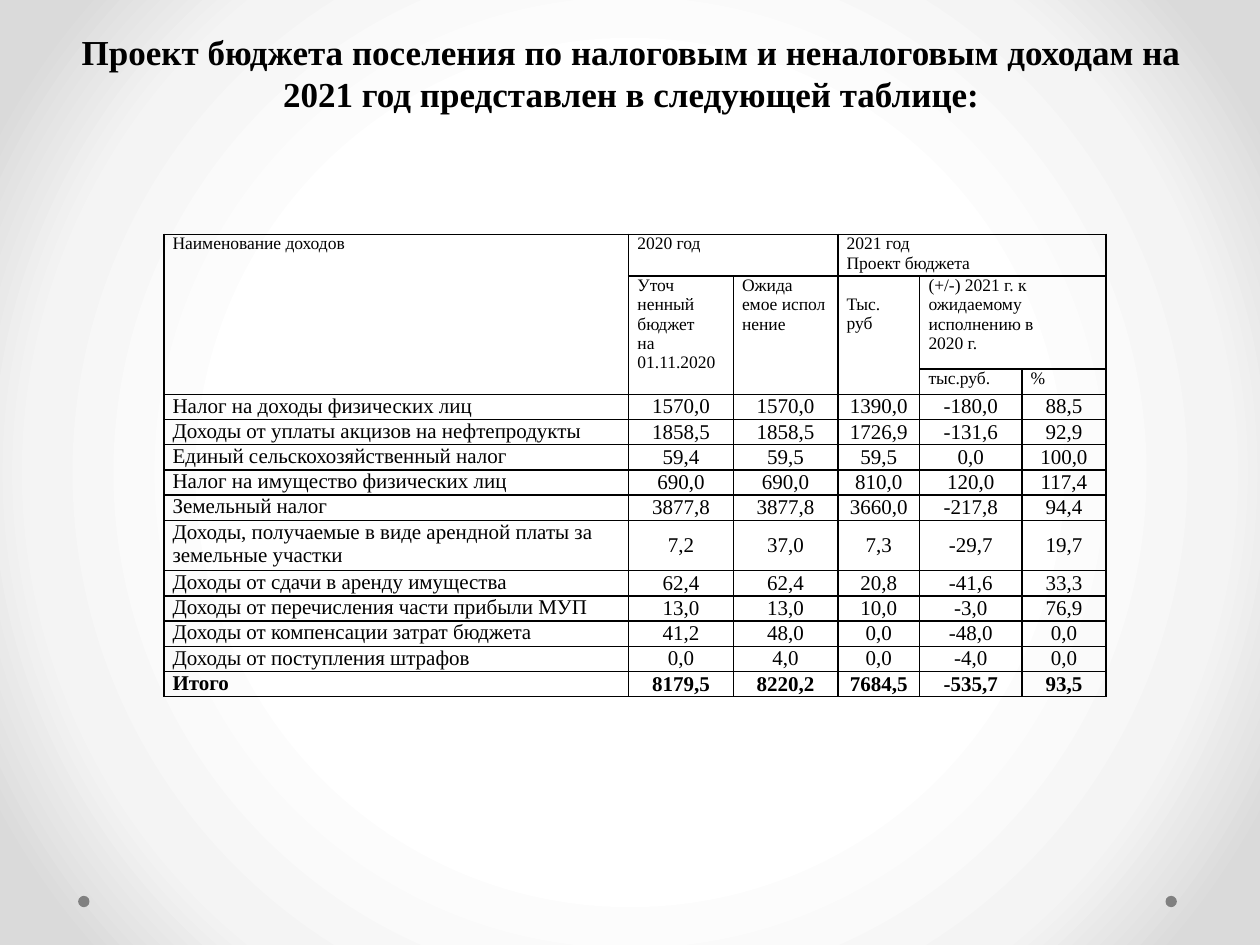
from lxml.etree import fromstring
from pptx import Presentation
from pptx.dml.color import RGBColor
from pptx.enum.shapes import MSO_SHAPE
from pptx.enum.text import MSO_ANCHOR, MSO_AUTO_SIZE, PP_ALIGN
from pptx.oxml.ns import qn
from pptx.util import Inches, Pt

COLORS = {"ink": "000000", "dot": "808080", "core": "FFFFFF", "ring": "F4F4F4", "edge": "DADADA"}
FONT = "Times New Roman"
NS = "http://schemas.openxmlformats.org/drawingml/2006/main"

TITLE = ("Проект бюджета поселения по налоговым и неналоговым доходам на "
         "2021 год представлен в следующей таблице:")
COLS = [3.69, 0.83, 0.83, 0.65, 0.81, 0.67]
ROWS = [0.33, 0.74] + [0.2] * 6 + [0.4] + [0.2] * 5

# Header cells: first row and column, last row and column, text
HEAD = [
    (0, 0, 2, 0, "Наименование доходов"),
    (0, 1, 0, 2, "2020 год"),
    (0, 3, 0, 5, "2021 год\nПроект бюджета"),
    (1, 1, 2, 1, "Уточ\nненный бюджет\nна\n01.11.2020"),
    (1, 2, 2, 2, "Ожида\nемое испол\nнение"),
    (1, 3, 2, 3, "Тыс.\nруб"),
    (1, 4, 1, 5, "(+/-) 2021 г. к ожидаемому\nисполнению в\n2020 г."),
    (2, 4, 2, 4, "тыс.руб."),
    (2, 5, 2, 5, "%"),
]
DATA = [
    ("Налог на доходы физических лиц", "1570,0", "1570,0", "1390,0", "-180,0", "88,5"),
    ("Доходы от уплаты акцизов на нефтепродукты", "1858,5", "1858,5", "1726,9", "-131,6", "92,9"),
    ("Единый сельскохозяйственный налог", "59,4", "59,5", "59,5", "0,0", "100,0"),
    ("Налог на имущество физических лиц", "690,0", "690,0", "810,0", "120,0", "117,4"),
    ("Земельный налог", "3877,8", "3877,8", "3660,0", "-217,8", "94,4"),
    ("Доходы, получаемые в виде арендной платы за земельные участки",
     "7,2", "37,0", "7,3", "-29,7", "19,7"),
    ("Доходы от сдачи в аренду имущества", "62,4", "62,4", "20,8", "-41,6", "33,3"),
    ("Доходы от перечисления части прибыли МУП", "13,0", "13,0", "10,0", "-3,0", "76,9"),
    ("Доходы от компенсации затрат бюджета", "41,2", "48,0", "0,0", "-48,0", "0,0"),
    ("Доходы от поступления штрафов", "0,0", "4,0", "0,0", "-4,0", "0,0"),
    ("Итого", "8179,5", "8220,2", "7684,5", "-535,7", "93,5"),
]


def color(name):
    return RGBColor.from_string(COLORS[name])


def write(frame, text, size=12, bold=False, align=PP_ALIGN.LEFT):
    """Fill a text frame, one paragraph for each line."""
    for i, line in enumerate(text.split("\n")):
        para = frame.paragraphs[0] if i == 0 else frame.add_paragraph()
        para.alignment = align
        run = para.add_run()
        run.text = line
        run.font.name = FONT
        run.font.size = Pt(size)
        run.font.bold = bold
        run.font.color.rgb = color("ink")


def paint_back(slide):
    """Radial gradient, light in the centre."""
    slide.background.fill.solid()
    fill = slide.background.fill
    fill.fore_color.rgb = color("core")
    prop = slide.element.find(".//" + qn("p:bgPr"))
    stops = "".join(
        f'<a:gs pos="{pos * 1000}"><a:srgbClr val="{COLORS[name]}"/></a:gs>'
        for pos, name in [(50, "core"), (76, "ring"), (92, "edge")])
    grad = fromstring(
        f'<a:gradFill xmlns:a="{NS}" rotWithShape="1"><a:gsLst>{stops}</a:gsLst>'
        '<a:path path="circle"><a:fillToRect l="50000" t="50000" r="50000" b="50000"/>'
        '</a:path></a:gradFill>')
    prop.replace(prop.find(qn("a:solidFill")), grad)


def add_dots(slide, left, top, width, size):
    """One dot at each end of the box."""
    for x in (left, left + width - size):
        dot = slide.shapes.add_shape(
            MSO_SHAPE.OVAL, Inches(x), Inches(top), Inches(size), Inches(size))
        dot.shadow.inherit = False
        dot.fill.solid()
        dot.fill.fore_color.rgb = color("dot")
        dot.line.fill.background()


def add_title(slide, left, top, width, height):
    title = slide.shapes.title
    title.left, title.top = Inches(left), Inches(top)
    title.width, title.height = Inches(width), Inches(height)
    frame = title.text_frame
    frame.word_wrap = True
    frame.auto_size = MSO_AUTO_SIZE.NONE
    frame.vertical_anchor = MSO_ANCHOR.BOTTOM
    write(frame, TITLE, size=20, bold=True, align=PP_ALIGN.CENTER)


def style_cell(cell):
    """Clear fill, tight margins and thin black borders."""
    cell.fill.background()
    cell.margin_left = cell.margin_right = Inches(0.07)
    cell.margin_top = cell.margin_bottom = 0
    prop = cell._tc.get_or_add_tcPr()
    for i, side in enumerate("LRTB"):
        prop.insert(i, fromstring(
            f'<a:ln{side} xmlns:a="{NS}" w="{Pt(1)}"><a:solidFill>'
            f'<a:srgbClr val="{COLORS["ink"]}"/></a:solidFill></a:ln{side}>'))


def add_grid(slide, left, top, width, height):
    table = slide.shapes.add_table(
        len(ROWS), len(COLS), Inches(left), Inches(top), Inches(width), Inches(height)).table
    table.first_row = table.horz_banding = False
    for col, size in zip(table.columns, COLS):
        col.width = Inches(size)
    for row, size in zip(table.rows, ROWS):
        row.height = Inches(size)
    for cell in table.iter_cells():
        style_cell(cell)

    # Header
    for row, col, last, end, text in HEAD:
        cell = table.cell(row, col)
        if (row, col) != (last, end):
            cell.merge(table.cell(last, end))
        write(cell.text_frame, text, size=10)
    table.cell(1, 3).margin_top = Inches(0.15)

    # Income rows, with the total in bold
    for r, (name, *nums) in enumerate(DATA, 3):
        bold = r == len(ROWS) - 1
        write(table.cell(r, 0).text_frame, name, bold=bold)
        for c, num in enumerate(nums, 1):
            cell = table.cell(r, c)
            cell.vertical_anchor = MSO_ANCHOR.MIDDLE
            write(cell.text_frame, num, bold=bold, align=PP_ALIGN.CENTER)


def main():
    deck = Presentation()
    deck.slide_width, deck.slide_height = Inches(10), Inches(7.5)
    slide = deck.slides.add_slide(deck.slide_layouts[5])
    paint_back(slide)
    add_dots(slide, 0.62, 7.11, 8.72, 0.09)
    add_title(slide, 0.51, 0.36, 9, 0.6)
    add_grid(slide, 1.3, 1.86, sum(COLS), sum(ROWS))
    deck.save("out.pptx")


if __name__ == "__main__":
    main()
